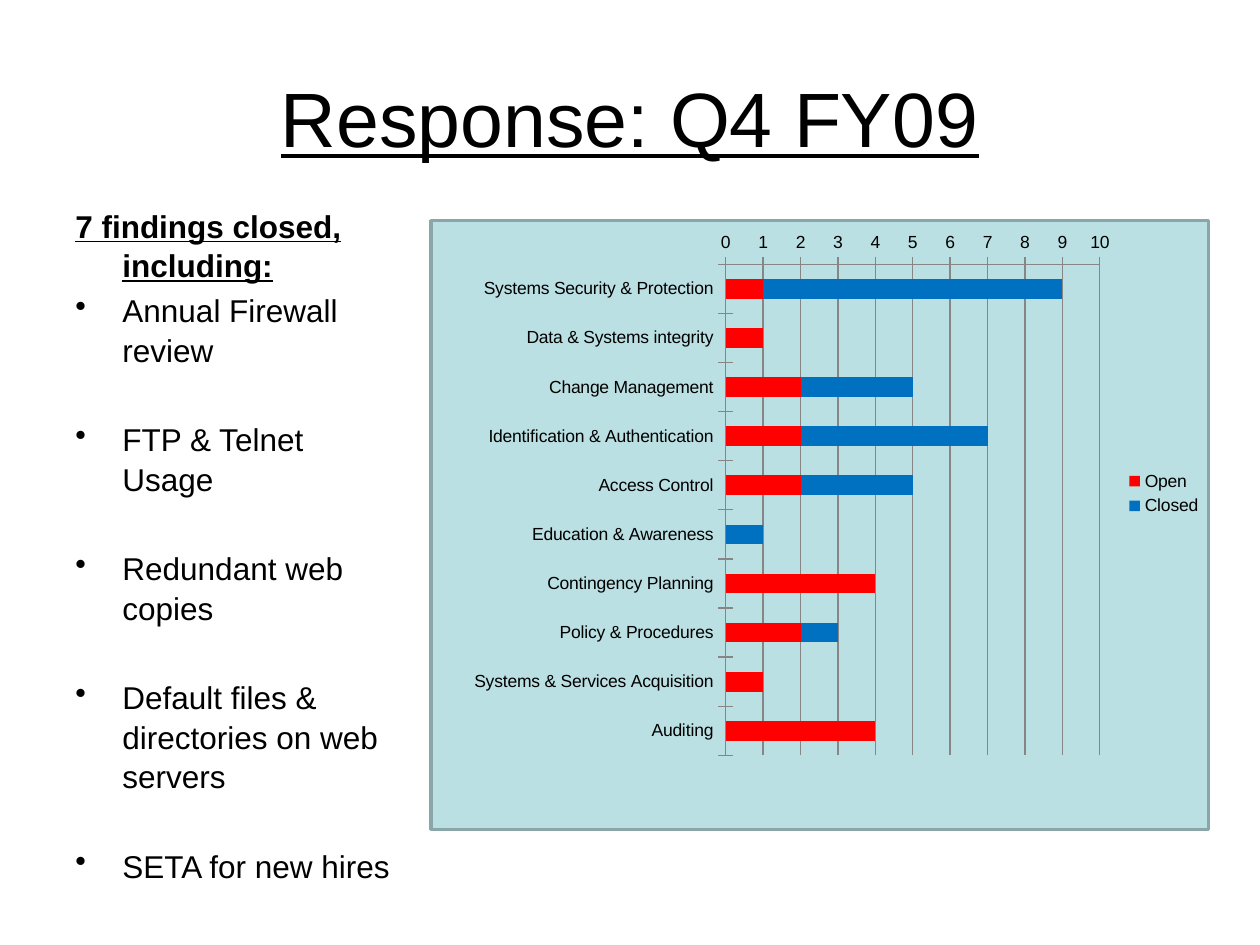
from typing import NamedTuple

from pptx import Presentation
from pptx import oxml, util as u
from pptx.chart.data import CategoryChartData
from pptx.dml.color import RGBColor
from pptx.enum import chart as charts, shapes, text
from pptx.oxml import ns

BLACK = RGBColor(0x00, 0x00, 0x00)
PANEL_FILL = RGBColor(0xBB, 0xE0, 0xE3)
PANEL_LINE = RGBColor(0x8A, 0xA6, 0xA8)
GRID_GREY = RGBColor(0x86, 0x86, 0x86)
OPEN_RED = RGBColor(0xFF, 0x00, 0x00)
CLOSED_BLUE = RGBColor(0x00, 0x70, 0xC0)
FONT = "Arial"


class Area(NamedTuple):
    left: float
    top: float
    width: float
    height: float

    def lengths(self):
        return [u.Cm(value) for value in self]


class Line(NamedTuple):
    words: str
    space_before: float
    heading: bool = False


class Finding(NamedTuple):
    category: str
    open_count: int
    closed_count: int


TITLE = Area(1.27, 0.76, 22.86, 3.18)
BODY = Area(1.27, 4.01, 6.99, 12.9)
PANEL = Area(8.69, 4.45, 15.67, 12.27)
CHART = Area(9.09, 4.45, 15.39, 11)
PLOT = {"x": 0.36, "y": 0.08, "w": 0.49, "h": 0.9}

LINES = [
    Line("7 findings closed, including:", 0, heading=True),
    Line("Annual Firewall review", 3.6),
    Line("FTP & Telnet Usage", 28.8),
    Line("Redundant web copies", 28.8),
    Line("Default files & directories on web servers", 28.8),
    Line("SETA for new hires", 28.8),
]

FINDINGS = [
    Finding("Systems Security & Protection", 1, 8),
    Finding("Data & Systems integrity", 1, 0),
    Finding("Change Management", 2, 3),
    Finding("Identification & Authentication", 2, 5),
    Finding("Access Control", 2, 3),
    Finding("Education & Awareness", 0, 1),
    Finding("Contingency Planning", 4, 0),
    Finding("Policy & Procedures", 2, 1),
    Finding("Systems & Services Acquisition", 1, 0),
    Finding("Auditing", 4, 0),
]


def style_font(font, size: float) -> None:
    font.name = FONT
    font.size = u.Pt(size)
    font.color.rgb = BLACK


def add_panel(page) -> None:
    panel = page.shapes.add_shape(shapes.MSO_SHAPE.RECTANGLE, *PANEL.lengths())
    panel.shadow.inherit = False
    panel.fill.solid()
    panel.fill.fore_color.rgb = PANEL_FILL
    panel.line.color.rgb = PANEL_LINE
    panel.line.width = u.Pt(2)


def add_title(page) -> None:
    box = page.shapes.add_textbox(*TITLE.lengths())
    box.text_frame.word_wrap = True
    box.text_frame.vertical_anchor = text.MSO_ANCHOR.MIDDLE
    para = box.text_frame.paragraphs[0]
    para.alignment = text.PP_ALIGN.CENTER
    span = para.add_run()
    span.text = "Response: Q4 FY09"
    style_font(span.font, 44)
    span.font.underline = True


def set_hanging_indent(para, bulleted: bool) -> None:
    properties = para._p.get_or_add_pPr()
    indent = u.Cm(0.95)
    properties.set("marL", str(indent))
    properties.set("indent", str(-indent))
    if bulleted:
        bullet = oxml.parse_xml(f'<a:buChar {ns.nsdecls("a")} char="•"/>')
        properties.append(bullet)


def add_body(page) -> None:
    box = page.shapes.add_textbox(*BODY.lengths())
    frame = box.text_frame
    frame.word_wrap = True
    for index, line in enumerate(LINES):
        para = frame.add_paragraph() if index else frame.paragraphs[0]
        set_hanging_indent(para, bulleted=not line.heading)
        para.line_spacing = 1.04
        para.space_before = u.Pt(line.space_before)
        span = para.add_run()
        span.text = line.words
        style_font(span.font, 18)
        span.font.bold = line.heading
        span.font.underline = line.heading


def place_plot(chart) -> None:
    """Fix the inner plot area as fractions of the chart frame."""
    area = chart._chartSpace.chart.plotArea
    for layout in area.findall(ns.qn("c:layout")):
        area.remove(layout)
    modes = '<c:xMode val="edge"/><c:yMode val="edge"/>'
    sizes = "".join(f'<c:{key} val="{value}"/>' for key, value in PLOT.items())
    area.insert(0, oxml.parse_xml(
        f'<c:layout {ns.nsdecls("c")}><c:manualLayout>'
        f'<c:layoutTarget val="inner"/>{modes}{sizes}'
        '</c:manualLayout></c:layout>'))


def add_findings_chart(page) -> None:
    data = CategoryChartData()
    data.categories = [finding.category for finding in FINDINGS]
    data.add_series("Open", [finding.open_count for finding in FINDINGS])
    data.add_series("Closed", [finding.closed_count for finding in FINDINGS])
    chart = page.shapes.add_chart(
        charts.XL_CHART_TYPE.BAR_STACKED, *CHART.lengths(), data).chart
    style_font(chart.font, 10)
    chart.has_title = False
    chart.has_legend = True
    chart.legend.position = charts.XL_LEGEND_POSITION.RIGHT
    chart.legend.include_in_layout = False

    plot = chart.plots[0]
    plot.vary_by_categories = False
    plot.gap_width = 150
    plot.overlap = 100
    for series, color in zip(plot.series, (OPEN_RED, CLOSED_BLUE)):
        series.format.fill.solid()
        series.format.fill.fore_color.rgb = color

    for axis in (chart.category_axis, chart.value_axis):
        axis.major_tick_mark = charts.XL_TICK_MARK.CROSS
        axis.minor_tick_mark = charts.XL_TICK_MARK.NONE
        axis.format.line.color.rgb = GRID_GREY
    chart.category_axis.reverse_order = True
    values = chart.value_axis
    values.minimum_scale, values.maximum_scale, values.major_unit = 0, 10, 1
    values.has_major_gridlines = True
    values.major_gridlines.format.line.color.rgb = GRID_GREY
    place_plot(chart)


def main() -> None:
    deck = Presentation()
    deck.slide_width, deck.slide_height = u.Cm(25.4), u.Cm(19.05)
    page = deck.slides.add_slide(deck.slide_layouts[6])
    add_panel(page)
    add_title(page)
    add_body(page)
    add_findings_chart(page)
    deck.save("out.pptx")


if __name__ == "__main__":
    main()
